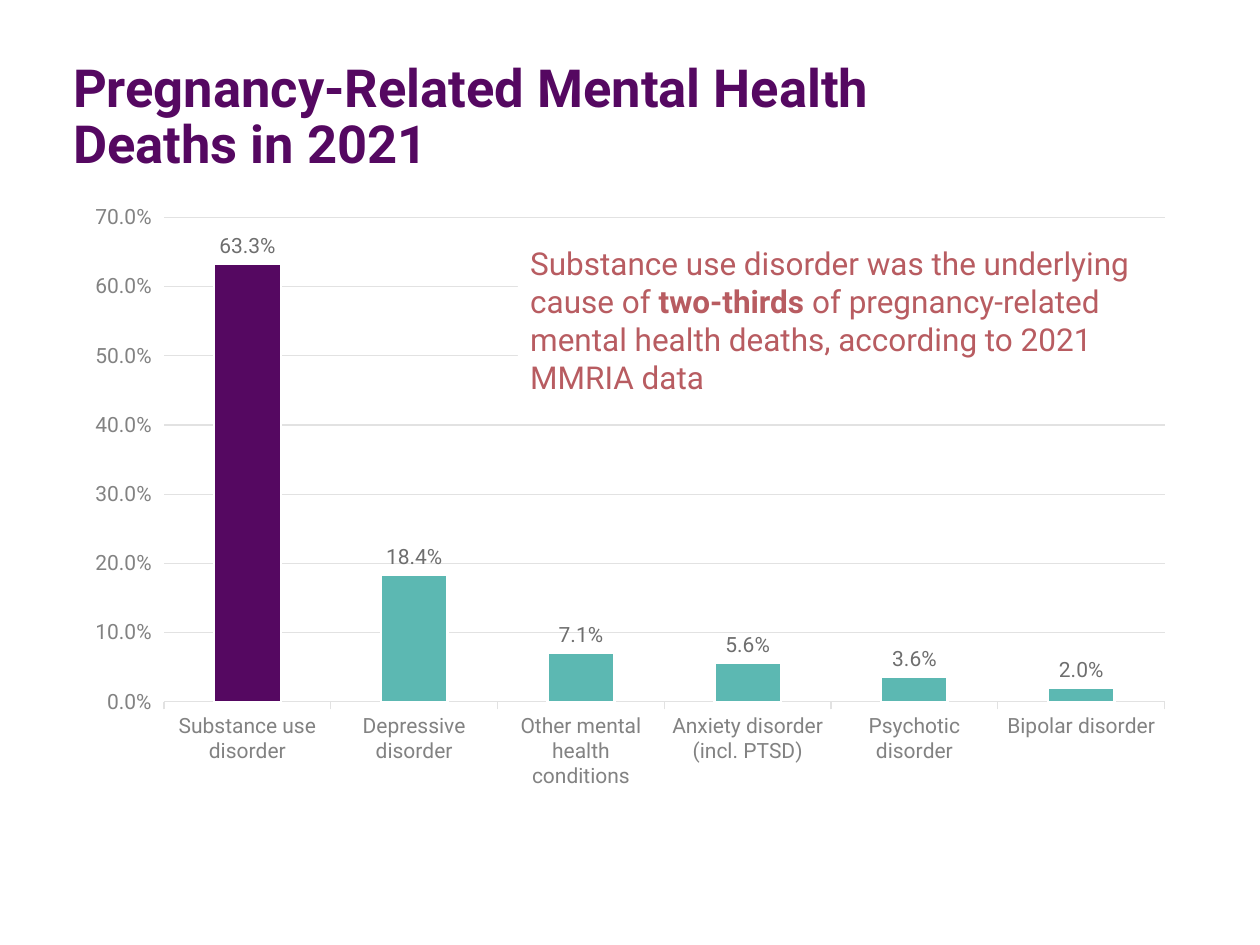
from pptx import Presentation
from pptx.chart.data import CategoryChartData
from pptx.dml.color import RGBColor
from pptx.enum.chart import XL_CHART_TYPE as ChartType, XL_LABEL_POSITION as LabelPosition
from pptx.enum.chart import XL_TICK_MARK as TickMark
from pptx.enum.shapes import MSO_SHAPE as Shape
from pptx.enum.text import MSO_ANCHOR as Anchor, MSO_AUTO_SIZE as AutoSize, PP_ALIGN as Align
from pptx.util import Inches, Pt

PURPLE = RGBColor(0x55, 0x08, 0x61)
TEAL = RGBColor(0x5C, 0xB8, 0xB2)
ROSE = RGBColor(0xB8, 0x5C, 0x61)
WHITE = RGBColor(0xFF, 0xFF, 0xFF)
AXIS_GREY = RGBColor(0x82, 0x82, 0x82)
LABEL_GREY = RGBColor(0x6E, 0x6E, 0x6E)
GRID_GREY = RGBColor(0xE2, 0xE2, 0xE2)
CHART_GREY = RGBColor(0x3E, 0x3E, 0x3E)

DEATH_SHARES = {
    "Substance use disorder": 0.633,
    "Depressive disorder": 0.184,
    "Other mental health conditions": 0.071,
    "Anxiety disorder (incl. PTSD)": 0.056,
    "Psychotic disorder": 0.036,
    "Bipolar disorder": 0.02,
}


def style_font(font, size, color, bold=False):
    font.name = "Roboto"
    font.size = Pt(size)
    font.color.rgb = color
    font.bold = bold


prs = Presentation()
prs.slide_width, prs.slide_height = Inches(10), Inches(7.5)
slide = prs.slides.add_slide(prs.slide_layouts[5])

margin = Inches(0.58)
title_top = Inches(0.35)
chart_top = Inches(1.53)

# Title
title = slide.shapes.title
title.left, title.top = margin, title_top
title.width, title.height = Inches(7.17), chart_top - title_top
title_frame = title.text_frame
title_frame.text = "Pregnancy-Related Mental Health Deaths in 2021"
title_frame.word_wrap = True
title_frame.auto_size = AutoSize.NONE
title_frame.vertical_anchor = Anchor.MIDDLE
title_frame.margin_left = 0
title_frame.margin_top = title_frame.margin_right = title_frame.margin_bottom = Inches(0.1)
heading = title_frame.paragraphs[0]
heading.alignment = Align.LEFT
heading.line_spacing = 0.9
style_font(heading.runs[0].font, 30, PURPLE, bold=True)

# Chart
data = CategoryChartData(number_format="0.0%")
data.categories = DEATH_SHARES.keys()
data.add_series("Series 1", DEATH_SHARES.values())
chart = slide.shapes.add_chart(
    ChartType.COLUMN_CLUSTERED, margin, chart_top,
    prs.slide_width - 2 * margin, Inches(4.83), data).chart
chart.has_title = False
chart.has_legend = False
style_font(chart.font, 10, CHART_GREY)

conditions, shares = chart.category_axis, chart.value_axis
for axis in (conditions, shares):
    axis.major_tick_mark = TickMark.OUTSIDE
    axis.minor_tick_mark = TickMark.NONE
    style_font(axis.tick_labels.font, 12, AXIS_GREY)
shares.minimum_scale, shares.maximum_scale, shares.major_unit = 0, 0.7, 0.1
shares.tick_labels.number_format = "0.0%"
shares.tick_labels.number_format_is_linked = False
shares.format.line.fill.background()
for line in (conditions.format.line, shares.major_gridlines.format.line):
    line.color.rgb = GRID_GREY
    line.width = Pt(0.75)

plot = chart.plots[0]
plot.gap_width = 150
plot.vary_by_categories = False
columns = plot.series[0]
for column, color in ((columns, TEAL), (columns.points[0], PURPLE)):
    column.format.fill.solid()
    column.format.fill.fore_color.rgb = color
    column.format.line.color.rgb = WHITE
    column.format.line.width = Pt(1.5)
labels = columns.data_labels
labels.show_value = True
labels.position = LabelPosition.OUTSIDE_END
labels.number_format = "0.0%"
labels.number_format_is_linked = False
style_font(labels.font, 12, LABEL_GREY)

# Takeaway over the gridlines
takeaway = slide.shapes.add_shape(
    Shape.RECTANGLE, Inches(4.11), Inches(1.89), Inches(5.14), Inches(1.31))
takeaway.shadow.inherit = False
takeaway.fill.solid()
takeaway.fill.fore_color.rgb = WHITE
takeaway.line.fill.background()
takeaway_frame = takeaway.text_frame
takeaway_frame.word_wrap = True
takeaway_frame.auto_size = AutoSize.SHAPE_TO_FIT_TEXT
takeaway_frame.vertical_anchor = Anchor.TOP
message = takeaway_frame.paragraphs[0]
message.alignment = Align.LEFT
for words, bold in (
    ("Substance use disorder was the underlying cause of ", False),
    ("two-thirds", True),
    (" of pregnancy-related mental health deaths, according to 2021 MMRIA data", False),
):
    run = message.add_run()
    run.text = words
    style_font(run.font, 18, ROSE, bold)

prs.save("out.pptx")
